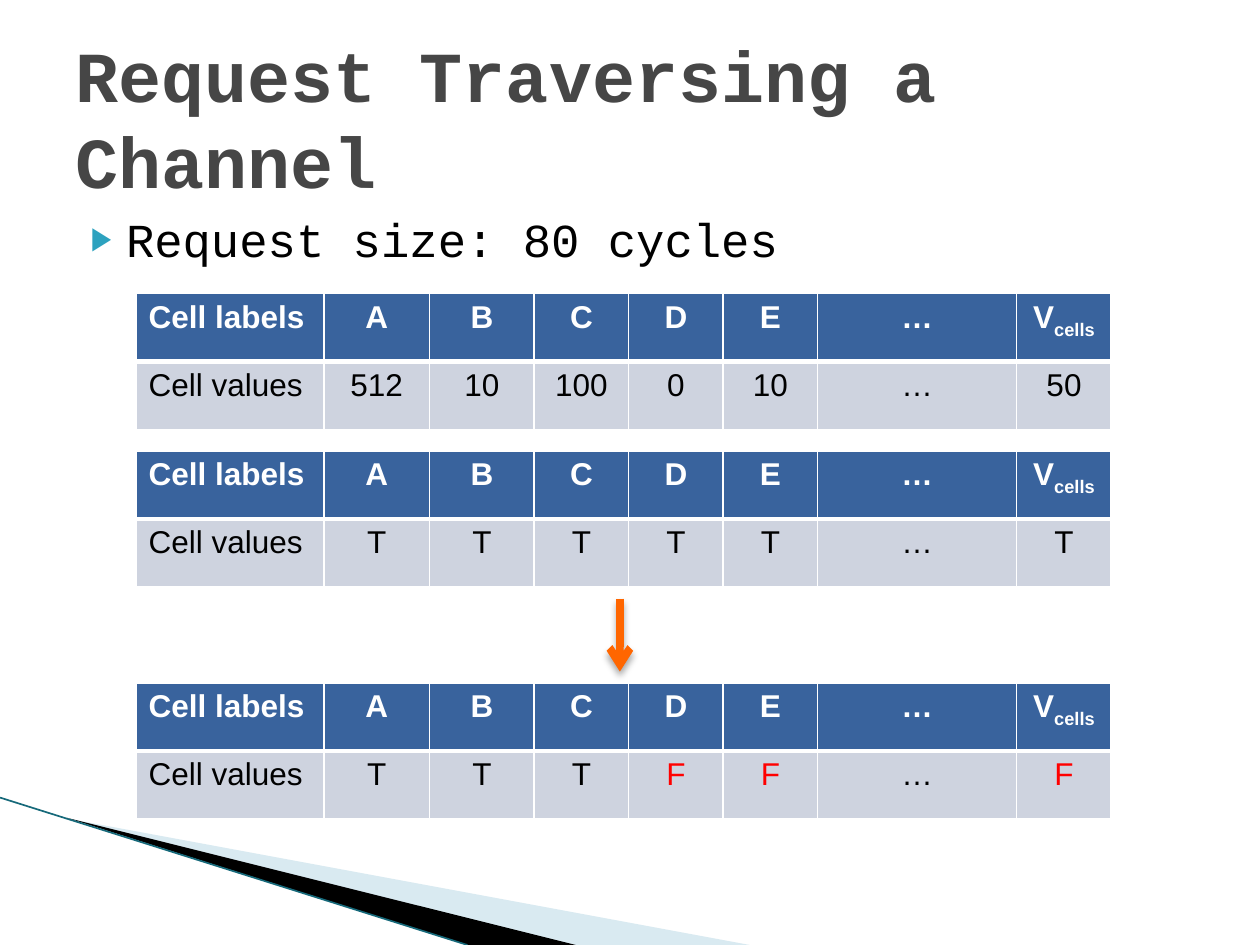
from lxml import etree
from pptx import Presentation, util as u
from pptx.dml.color import RGBColor
from pptx.enum import shapes, text
from pptx.oxml.ns import qn

PX = 9144
COLORS = {
    "white": "FFFFFF", "black": "000000", "title": "464646", "bullet": "2DA2BF",
    "header": "39639D", "values": "CED3DF", "changed": "FF0000", "arrow": "FF6600",
    "wedge": "A0CBDC", "edge": "16697A",
}
COLUMNS = [149, 84, 83, 75, 75, 75, 158, 75]
ROW_HEIGHT = 54
LABELS = ["Cell labels", "A", "B", "C", "D", "E", "…", "V_cells"]
TABLES = [
    (233, ["Cell values", "512", "10", "100", "0", "10", "…", "50"]),
    (358, ["Cell values", "T", "T", "T", "T", "T", "…", "T"]),
    (542, ["Cell values", "T", "T", "T", "F", "F", "…", "F"]),
]


def px(*lengths):
    """Turn whole px into EMU."""
    return [length * PX for length in lengths]


def color(name):
    """Return a named colour."""
    return RGBColor.from_string(COLORS[name])


def element(parent, tag, **attributes):
    """Append a drawing element with attributes and return it."""
    child = etree.SubElement(parent, qn("a:" + tag))
    for name, value in attributes.items():
        child.set(name, str(value))
    return child


def format_font(font, color_name, **values):
    """Apply a named colour and a dict of font values."""
    for key, value in values.items():
        setattr(font, key, value)
    font.color.rgb = color(color_name)


def fill_placeholder(placeholder, box, words, anchor):
    """Move a placeholder, write its words and return its paragraph."""
    for key, value in zip(("left", "top", "width", "height"), px(*box)):
        setattr(placeholder, key, value)
    frame = placeholder.text_frame
    for key, value in {"text": words, "vertical_anchor": anchor, "word_wrap": True,
                       "auto_size": text.MSO_AUTO_SIZE.NONE}.items():
        setattr(frame, key, value)
    paragraph = frame.paragraphs[0]
    paragraph.alignment = text.PP_ALIGN.LEFT
    return paragraph


def add_title(slide, box):
    """Fill the title placeholder."""
    paragraph = fill_placeholder(slide.shapes.title, box, "Request Traversing a Channel",
                                 text.MSO_ANCHOR.MIDDLE)
    format_font(paragraph.runs[0].font, "title", name="Courier New", size=u.Pt(41), bold=True)


def add_body(slide, box):
    """Fill the body placeholder with its bulleted line."""
    paragraph = fill_placeholder(slide.placeholders[1], box, "Request size: 80 cycles",
                                 text.MSO_ANCHOR.TOP)
    paragraph.space_before = u.Pt(0)
    properties = paragraph._p.get_or_add_pPr()
    properties.set("marL", str(40 * PX))
    properties.set("indent", str(-28 * PX))
    element(element(properties, "buClr"), "srgbClr", val=COLORS["bullet"])
    element(properties, "buSzPct", val=68000)
    element(properties, "buFont", typeface="Arial")
    element(properties, "buChar", char="▶")
    format_font(paragraph.runs[0].font, "black", name="Courier New", size=u.Pt(27))


def add_wedge(slide, points, name, opacity=100):
    """Add a filled corner wedge."""
    builder = slide.shapes.build_freeform(*points[0], scale=PX)
    builder.add_line_segments(points[1:], close=True)
    wedge = builder.convert_to_shape()
    wedge.shadow.inherit = False
    wedge.fill.solid()
    wedge.fill.fore_color.rgb = color(name)
    wedge.line.fill.background()
    if opacity < 100:
        fill = wedge._element.spPr.find(qn("a:solidFill"))
        element(fill[0], "alpha", val=opacity * 1000)


def add_line(slide, start, end, name, width):
    """Add a straight line and return it with its empty effect list."""
    line = slide.shapes.add_connector(shapes.MSO_CONNECTOR.STRAIGHT, *px(*start, *end))
    line.line.color.rgb = color(name)
    line.line.width = u.Pt(width)
    return line, element(line._element.spPr, "effectLst")


def add_decoration(slide, left, top):
    """Add the corner wedges and their edge line."""
    def place(*points):
        return [(left + x, top + y) for x, y in points]

    add_wedge(slide, place((55, 17), (595, 117), (456, 117)), "wedge", 40)
    add_wedge(slide, place((53, 16), (457, 117), (371, 117)), "black")
    add_line(slide, *place((0, 0), (371, 117)), "edge", 0.95)


def add_arrow(slide, x, top, height):
    """Add the shadowed arrow that leads to the last table."""
    arrow, effects = add_line(slide, (x, top), (x, top + height), "arrow", 4.33)
    element(arrow._element.spPr.find(qn("a:ln")), "tailEnd", type="arrow")
    shadow = element(effects, "outerShdw", blurRad=u.Pt(4), dist=u.Pt(3), dir=5400000,
                     rotWithShape=0)
    element(element(shadow, "srgbClr", val=COLORS["black"]), "alpha", val=35000)


def format_cell(cell, words, is_header, is_first):
    """Write one cell with its fill and white borders."""
    paragraph = cell.text_frame.paragraphs[0]
    paragraph.alignment = text.PP_ALIGN.LEFT if is_first else text.PP_ALIGN.CENTER
    color_name = "white" if is_header else "changed" if words == "F" else "black"
    base, _, subscript = words.partition("_")
    for part in filter(None, (base, subscript)):
        run = paragraph.add_run()
        run.text = part
        format_font(run.font, color_name, name="Arial", size=u.Pt(18), bold=is_header)
        if part == subscript:
            run._r.get_or_add_rPr().set("baseline", "-25000")
    properties = cell._tc.get_or_add_tcPr()
    thick = "lnB" if is_header else "lnT"
    for side in ("lnL", "lnR", "lnT", "lnB"):
        border = element(properties, side, w=u.Pt(3 if side == thick else 1))
        element(element(border, "solidFill"), "srgbClr", val=COLORS["white"])
    cell.fill.solid()
    cell.fill.fore_color.rgb = color("header" if is_header else "values")


def add_cell_table(slide, left, top, values):
    """Add a table of cell labels over cell values."""
    rows = [LABELS, values]
    box = px(left, top, sum(COLUMNS), ROW_HEIGHT * len(rows))
    table = slide.shapes.add_table(len(rows), len(COLUMNS), *box).table
    for column, width in zip(table.columns, px(*COLUMNS)):
        column.width = width
    for row_index, row in enumerate(rows):
        table.rows[row_index].height = ROW_HEIGHT * PX
        for column_index, words in enumerate(row):
            format_cell(table.cell(row_index, column_index), words,
                        row_index == 0, column_index == 0)


def main():
    """Build and save the slide."""
    presentation = Presentation()
    presentation.slide_width, presentation.slide_height = px(1000, 750)
    slide = presentation.slides.add_slide(presentation.slide_layouts[1])
    add_title(slide, (50, 30, 900, 125))
    add_body(slide, (50, 162, 900, 495))
    add_decoration(slide, 0, 633)
    for top, values in TABLES:
        add_cell_table(slide, 108, top, values)
    add_arrow(slide, 492, 475, 58)
    presentation.save("out.pptx")


if __name__ == "__main__":
    main()
